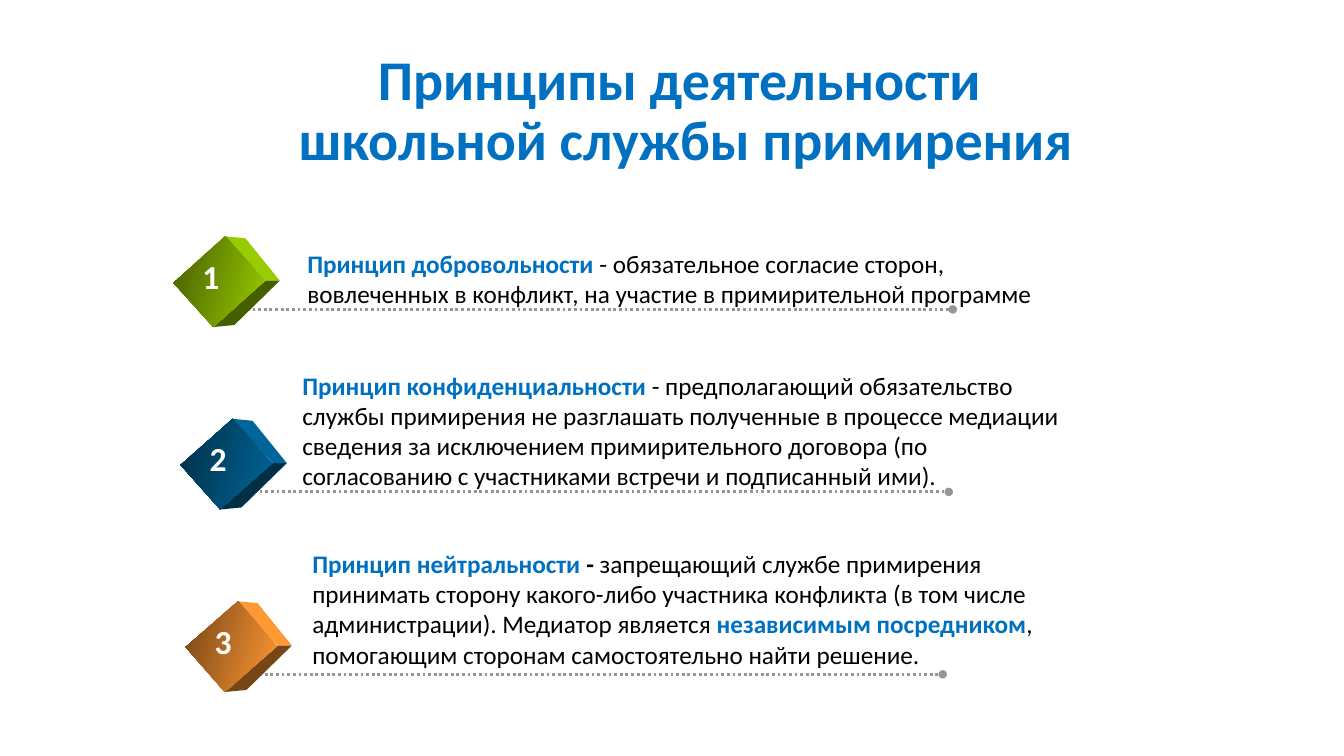
import dataclasses

import lxml.etree
import pptx
import pptx.dml.color
import pptx.enum.dml
import pptx.enum.shapes
import pptx.enum.text
import pptx.oxml.ns
import pptx.util

Inches = pptx.util.Inches
Pt = pptx.util.Pt
FONT = "Calibri"
COLORS = {
    "blue": "0070C0",
    "black": "000000",
    "white": "FFFFFF",
    "gray": "969696",
    "green": "99CC00",
    "green_dark": "465E00",
    "navy": "006699",
    "navy_dark": "002F46",
    "orange": "FF9933",
    "orange_dark": "764617",
}
# Side faces of a cube, as offsets from the centre of its front
TOP_SIDE = [(0.06, -0.45), (0.26, -0.43), (0.6, -0.01), (0.46, -0.01)]
LOW_SIDE = [(0.46, -0.01), (0.6, -0.01), (0.15, 0.43), (-0.06, 0.45)]
CUBE_W, CUBE_H = 0.59, 0.69
FIRST_TOP, STEP = 2.45, 1.81


@dataclasses.dataclass
class Run:
    text: str
    color: str = "black"
    bold: bool = False


@dataclasses.dataclass
class Item:
    hue: str
    left: float
    turn: float
    line_end: float
    box: tuple[float, float, float, float]
    runs: list[Run]


ITEMS = [
    Item("green", 1.88, 48, 9.45, (2.95, 2.41, 7.54, 0.7), [
        Run("Принцип добровольности", "blue", True),
        Run(" - обязательное согласие сторон, вовлеченных в конфликт, "
            "на участие в примирительной программе"),
    ]),
    Item("navy", 1.95, 48.4, 9.41, (2.9, 3.62, 7.8, 1.3), [
        Run("Принцип конфиденциальности", "blue", True),
        Run(" - предполагающий обязательство службы примирения не разглашать "
            "полученные в процессе медиации сведения за исключением "
            "примирительного договора (по согласованию с участниками встречи "
            "и подписанный ими)."),
    ]),
    Item("orange", 2, 48.9, 9.35, (3, 5.39, 7.9, 1.6), [
        Run("Принцип нейтральности", "blue", True),
        Run(" -", "black", True),
        Run(" запрещающий службе примирения принимать сторону какого-либо "
            "участника конфликта (в том числе администрации). "
            "Медиатор является "),
        Run("независимым посредником", "blue", True),
        Run(", помогающим сторонам самостоятельно найти решение."),
    ]),
]


def rgb(name: str) -> pptx.dml.color.RGBColor:
    return pptx.dml.color.RGBColor.from_string(COLORS[name])


def style(font, size: float, color: str, bold: bool) -> None:
    font.name, font.size, font.bold = FONT, Pt(size), bold
    font.color.rgb = rgb(color)


def add_box(shapes, box: tuple[float, float, float, float], wrap: bool):
    """Add a text box that grows with its text; return its paragraph."""
    frame = shapes.add_textbox(*map(Inches, box)).text_frame
    frame.word_wrap = wrap
    frame.auto_size = pptx.enum.text.MSO_AUTO_SIZE.SHAPE_TO_FIT_TEXT
    return frame.paragraphs[0]


def add_rule(shapes, start: float, end: float, y: float) -> None:
    """Add a dotted line that ends in a dot."""
    rule = shapes.add_connector(
        pptx.enum.shapes.MSO_CONNECTOR.STRAIGHT,
        Inches(start), Inches(y), Inches(end), Inches(y))
    rule.line.color.rgb = rgb("gray")
    rule.line.width = Pt(2)
    rule.line.dash_style = pptx.enum.dml.MSO_LINE.ROUND_DOT
    qn = pptx.oxml.ns.qn
    props = rule._element.spPr
    lxml.etree.SubElement(props.find(qn("a:ln")), qn("a:tailEnd"), type="oval")
    lxml.etree.SubElement(props, qn("a:effectLst"))


def add_side(shapes, x: float, y: float,
             points: list[tuple[float, float]], color: str) -> None:
    spots = [(Inches(x + dx), Inches(y + dy)) for dx, dy in points]
    form = shapes.build_freeform(*spots[0])
    form.add_line_segments(spots[1:], close=True)
    side = form.convert_to_shape()
    side.shadow.inherit = False
    side.fill.solid()
    side.fill.fore_color.rgb = rgb(color)
    side.line.fill.background()


def add_cube(shapes, item: Item, top: float) -> None:
    dark = f"{item.hue}_dark"
    x, y = item.left + CUBE_W / 2, top + CUBE_H / 2
    add_side(shapes, x, y, TOP_SIDE, item.hue)
    add_side(shapes, x, y, LOW_SIDE, dark)
    front = shapes.add_shape(
        pptx.enum.shapes.MSO_SHAPE.RECTANGLE,
        Inches(item.left), Inches(top), Inches(CUBE_W), Inches(CUBE_H))
    front.rotation = item.turn
    front.shadow.inherit = False
    front.line.fill.background()
    front.fill.gradient()
    front.fill.gradient_angle = 213
    for stop, color, place in zip(front.fill.gradient_stops,
                                  (item.hue, dark), (0, 1)):
        stop.color.rgb = rgb(color)
        stop.position = place


def add_item(slide, index: int, item: Item) -> None:
    top = FIRST_TOP + index * STEP
    shapes = slide.shapes.add_group_shape().shapes
    add_rule(shapes, item.left + 0.29, item.line_end, top + 0.62)
    add_cube(shapes, item, top)
    label = add_box(shapes, (item.left + 0.03, top + 0.04, 0.37, 0.5), False)
    label.text = str(index + 1)
    style(label.font, 24, "white", True)
    para = add_box(slide.shapes, item.box, True)
    for part in item.runs:
        run = para.add_run()
        run.text = part.text
        style(run.font, 18, part.color, part.bold)


def add_title(slide) -> None:
    title = slide.shapes.title
    title.left, title.top = Inches(1.21), Inches(0.39)
    title.width, title.height = Inches(11.18), Inches(1.45)
    frame = title.text_frame
    frame.vertical_anchor = pptx.enum.text.MSO_ANCHOR.MIDDLE
    para = frame.paragraphs[0]
    para.text = "Принципы деятельности \vшкольной службы примирения"
    para.alignment = pptx.enum.text.PP_ALIGN.CENTER
    para.line_spacing = 0.9
    style(para.font, 40, "blue", True)


def main() -> None:
    deck = pptx.Presentation()
    deck.slide_width, deck.slide_height = Inches(13.33), Inches(7.5)
    slide = deck.slides.add_slide(deck.slide_layouts[5])
    add_title(slide)
    for index, item in enumerate(ITEMS):
        add_item(slide, index, item)
    deck.save("out.pptx")


if __name__ == "__main__":
    main()
